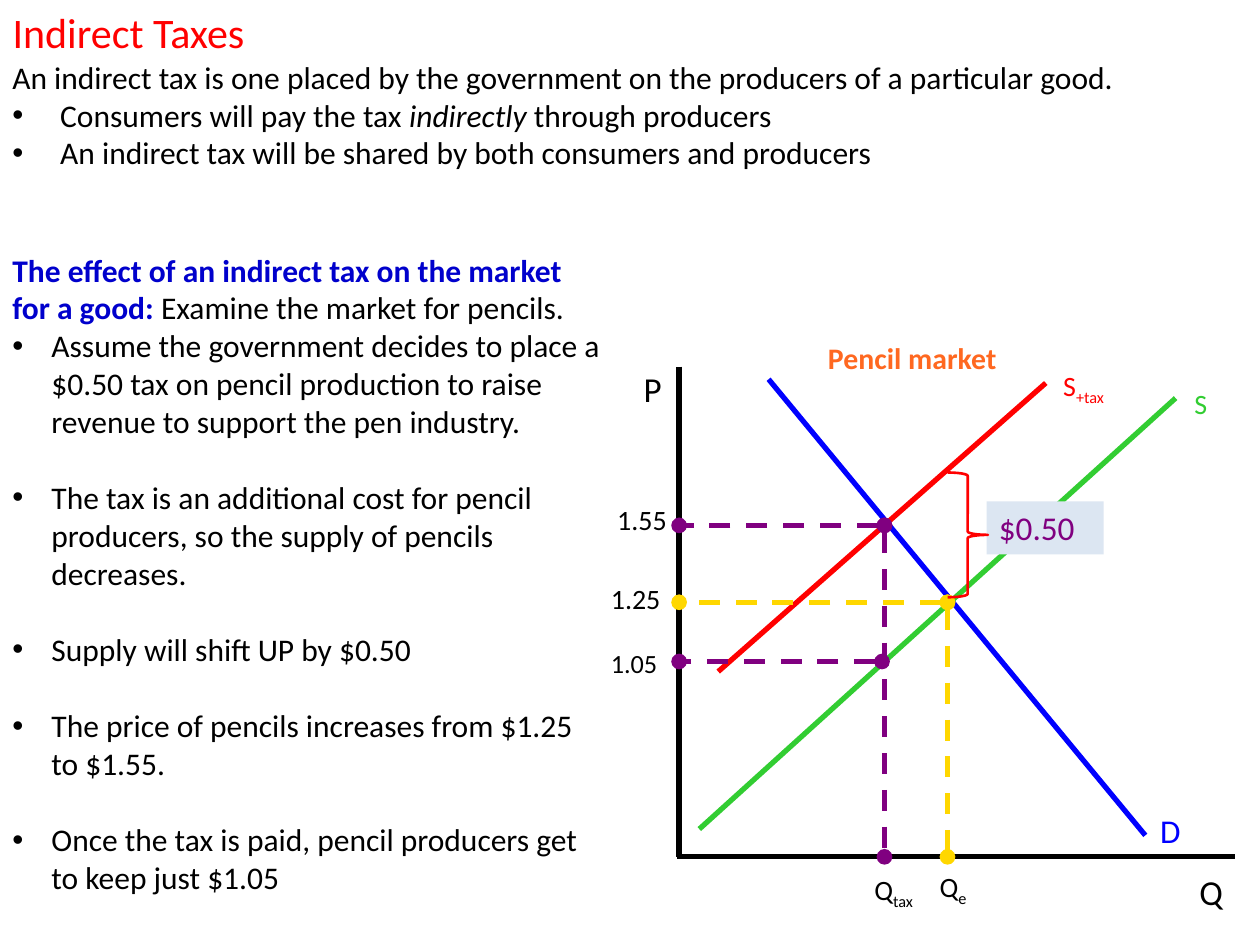
from dataclasses import dataclass

from lxml import etree
from pptx import Presentation
from pptx.dml.color import RGBColor
from pptx.enum.dml import MSO_LINE
from pptx.enum.shapes import MSO_CONNECTOR, MSO_SHAPE
from pptx.enum.text import MSO_ANCHOR, MSO_AUTO_SIZE, PP_ALIGN
from pptx.oxml.ns import qn
from pptx.slide import Slide
from pptx.text.text import TextFrame
from pptx.util import Inches, Pt

DASH = MSO_LINE.DASH
STRAIGHT = MSO_CONNECTOR.STRAIGHT
BRACE = MSO_SHAPE.RIGHT_BRACE
TOP = MSO_ANCHOR.TOP
NO_FIT = MSO_AUTO_SIZE.NONE
LEFT, CENTER = PP_ALIGN.LEFT, PP_ALIGN.CENTER

FONT = "Calibri"
COLORS = {
    "black": "000000", "red": "FF0000", "navy": "0000CC", "blue": "0000FF",
    "green": "32CD32", "gold": "FFD700", "purple": "800080",
    "orange": "FF6820", "pale": "DCE6F2",
}


@dataclass
class Run:
    text: str
    color: str = "black"
    bold: bool = False
    italic: bool = False
    sub: bool = False


@dataclass
class Line:
    start: tuple[float, float]
    end: tuple[float, float]
    color: str
    guide: bool = False  # dashed, with a dot at each end


@dataclass
class Label:
    box: tuple[float, float, float, float]
    text: str
    size: float = 16
    color: str = "black"
    sub: str = ""
    bold: bool = False
    align: PP_ALIGN = LEFT
    fill: str = ""


X_AXIS, Y_AXIS = 6.8, 5.39
Q_TAX, Q_EQ = 7.02, 7.52
P_TAX, P_EQ, P_NET = 4.17, 4.78, 5.25

LINES = [
    Line((Y_AXIS, 2.91), (Y_AXIS, X_AXIS), "black"),
    Line((5.37, X_AXIS), (9.8, X_AXIS), "black"),
    Line((6.1, 3.01), (9.09, 6.63), "blue"),
    Line((5.55, 6.58), (9.33, 3.16), "green"),
    Line((Q_EQ, P_EQ), (Q_EQ, X_AXIS), "gold", True),
    Line((5.7, 5.33), (8.3, 3.04), "red"),
    Line((Q_TAX, P_TAX), (Y_AXIS, P_TAX), "purple", True),
    Line((Q_TAX, P_TAX), (Q_TAX, X_AXIS), "purple", True),
    Line((7.0, P_NET), (Y_AXIS, P_NET), "purple", True),
    Line((Q_EQ, P_EQ), (Y_AXIS, P_EQ), "gold", True),
]

LABELS = [
    Label((6.32, 2.65, 1.84, 0.39), "Pencil market", 17, "orange",
          bold=True, align=CENTER),
    Label((9.38, 3.02, 0.51, 0.37), "S", color="green"),
    Label((8.34, 2.88, 0.84, 0.37), "S", color="red", sub="+tax"),
    Label((9.11, 6.38, 0.56, 0.42), "D", 19, "blue"),
    Label((9.42, 6.86, 0.59, 0.44), "Q", 20),
    Label((5.01, 2.87, 0.54, 0.44), "P", 20),
    Label((7.36, 6.85, 0.67, 0.37), "Q", sub="e"),
    Label((6.84, 6.88, 0.79, 0.37), "Q", sub="tax"),
    Label((4.8, 3.94, 0.79, 0.37), "1.55"),
    Label((4.75, 4.57, 0.79, 0.37), "1.25"),
    Label((4.75, 5.09, 0.74, 0.35), "1.05", 15),
    Label((7.83, 3.98, 0.93, 0.42), "$0.50", 19, "purple", fill="pale"),
]

INTRO = [Run("An indirect tax is one placed by the government on the "
             "producers of a particular good.")]
POINTS = [
    [Run("Consumers will pay the tax "), Run("indirectly ", italic=True),
     Run("through producers")],
    [Run("An indirect tax will be shared by both consumers and producers")],
]
EFFECT = [
    Run("The effect of an indirect tax on the market for a good: ",
        "navy", bold=True),
    Run("Examine the market for pencils."),
]
STEPS = [
    "Assume the government decides to place a $0.50 tax on pencil "
    "production to raise revenue to support the pen industry.",
    "The tax is an additional cost for pencil producers, so the supply of "
    "pencils decreases.",
    "Supply will shift UP by $0.50",
    "The price of pencils increases from $1.25 to $1.55.",
    "Once the tax is paid, pencil producers get to keep just $1.05",
]


def rgb(name: str) -> RGBColor:
    return RGBColor.from_string(COLORS[name])


def write(frame: TextFrame, runs: list[Run], *, size: float = 18,
          align: PP_ALIGN = LEFT, indent: float = 0, gap: float = 0) -> None:
    """Add one paragraph; an indent above zero makes it a bullet."""
    first = frame.paragraphs[0]
    para = frame.add_paragraph() if first.runs else first
    para.alignment = align
    para.space_before = Pt(gap)
    if indent:
        props = para._p.get_or_add_pPr()
        props.set("marL", str(Inches(indent)))
        props.set("indent", str(-Inches(indent)))
        etree.SubElement(props, qn("a:buFont"), typeface="Arial")
        etree.SubElement(props, qn("a:buChar"), char="•")
    for item in runs:
        run = para.add_run()
        run.text = item.text
        font = run.font
        font.name, font.size = FONT, Pt(size)
        font.bold, font.italic = item.bold, item.italic
        font.color.rgb = rgb(item.color)
        if item.sub:
            font._element.set("baseline", "-25000")


def add_box(slide: Slide, box: tuple[float, ...], fill: str = "") -> TextFrame:
    shape = slide.shapes.add_textbox(*map(Inches, box))
    if fill:
        shape.fill.solid()
        shape.fill.fore_color.rgb = rgb(fill)
    shape.text_frame.word_wrap = True
    return shape.text_frame


def add_title(slide: Slide, text: str) -> None:
    title = slide.shapes.title
    title.left, title.top = Inches(0), Inches(0)
    title.width, title.height = Inches(9.96), Inches(0.5)
    frame = title.text_frame
    frame.vertical_anchor, frame.auto_size = TOP, NO_FIT
    write(frame, [Run(text, "red")], size=24)


def add_line(slide: Slide, line: Line) -> None:
    shape = slide.shapes.add_connector(
        STRAIGHT, *map(Inches, line.start + line.end))
    shape.line.color.rgb = rgb(line.color)
    shape.line.width = Pt(3)
    if line.guide:
        shape.line.dash_style = DASH
        stroke = shape.line._get_or_add_ln()
        for end in ("a:headEnd", "a:tailEnd"):
            etree.SubElement(stroke, qn(end), type="oval")
    etree.SubElement(shape._element.spPr, qn("a:effectLst"))


def add_label(slide: Slide, label: Label) -> None:
    runs = [Run(label.text, label.color, label.bold)]
    if label.sub:
        runs.append(Run(label.sub, label.color, sub=True))
    frame = add_box(slide, label.box, label.fill)
    write(frame, runs, size=label.size, align=label.align)


def add_brace(slide: Slide, box: tuple[float, ...], color: str) -> None:
    brace = slide.shapes.add_shape(BRACE, *map(Inches, box))
    brace.shadow.inherit = False
    brace.fill.background()
    brace.line.color.rgb = rgb(color)
    brace.line.width = Pt(1.5)


def main() -> None:
    deck = Presentation()
    deck.slide_width, deck.slide_height = Inches(10), Inches(7.5)
    slide = deck.slides.add_slide(deck.slide_layouts[5])
    add_title(slide, "Indirect Taxes")

    intro = add_box(slide, (0, 0.41, 9.96, 1.0))
    write(intro, INTRO)
    for point in POINTS:
        write(intro, point, indent=0.38)

    effect = add_box(slide, (0, 1.94, 4.91, 5.25))
    write(effect, EFFECT)
    for num, step in enumerate(STEPS):
        write(effect, [Run(step)], indent=0.31, gap=22 if num else 0)

    for line in LINES:
        add_line(slide, line)
    for label in LABELS:
        add_label(slide, label)
    add_brace(slide, (Q_EQ, 3.75, 0.32, 0.99), "red")
    deck.save("out.pptx")


if __name__ == "__main__":
    main()
